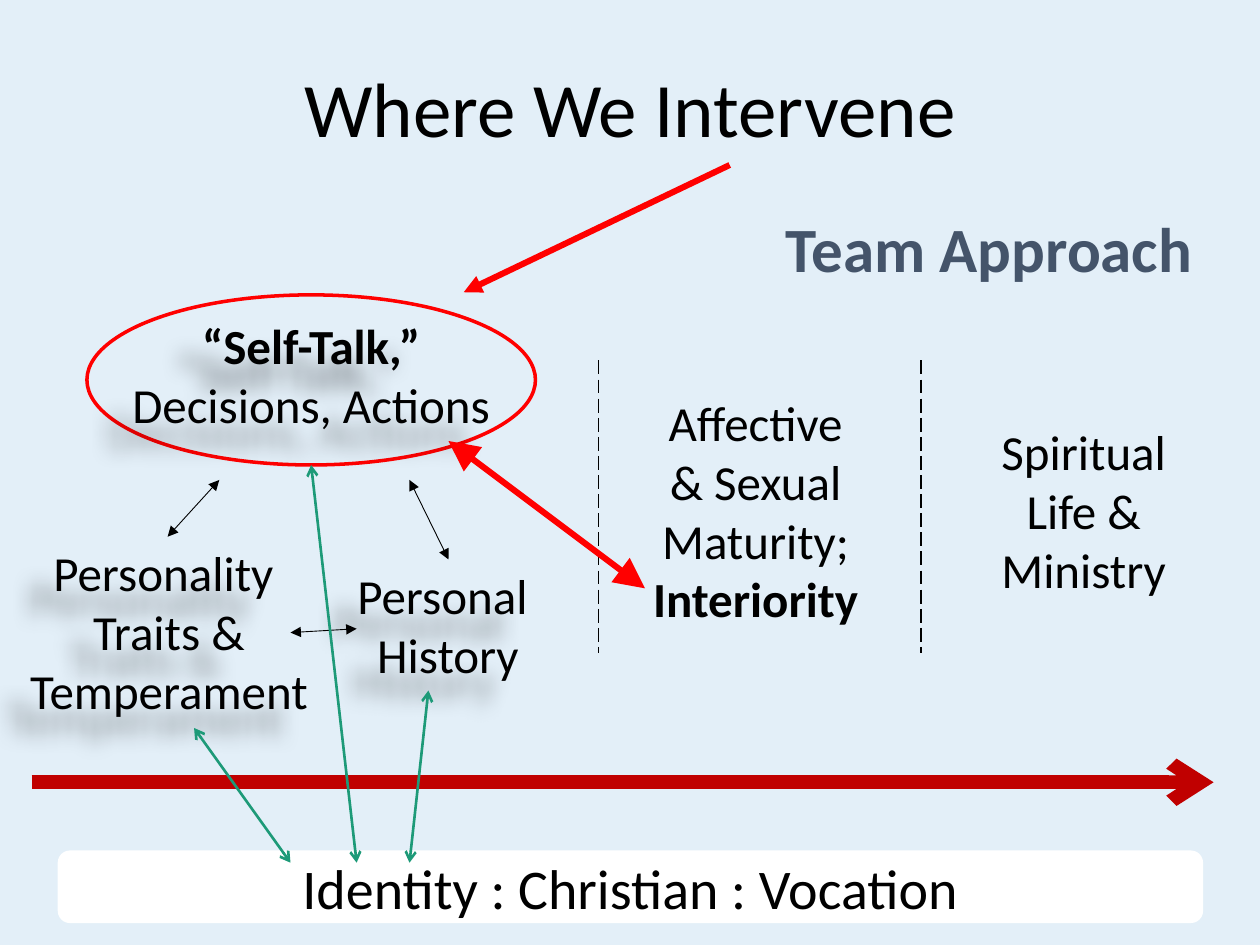
from dataclasses import dataclass

from lxml import etree
from pptx import Presentation
from pptx.dml.color import RGBColor
from pptx.enum.dml import MSO_LINE
from pptx.enum.shapes import MSO_CONNECTOR, MSO_SHAPE
from pptx.enum.text import MSO_ANCHOR, PP_ALIGN
from pptx.oxml import parse_xml
from pptx.oxml.ns import nsdecls, qn
from pptx.util import Pt

STRAIGHT = MSO_CONNECTOR.STRAIGHT
DASH = MSO_LINE.LONG_DASH
OVAL, ROUND = MSO_SHAPE.OVAL, MSO_SHAPE.ROUNDED_RECTANGLE
TOP, MIDDLE = MSO_ANCHOR.TOP, MSO_ANCHOR.MIDDLE
CENTER = PP_ALIGN.CENTER

FONT = "Calibri"
BLACK, WHITE, SLATE = "000000", "FFFFFF", "44546A"
RED, CRIMSON, GREEN, SKY = "FF0000", "C00000", "1D9A78", "E3EFF8"


@dataclass
class Label:
    box: tuple[float, float, float, float]
    lines: list[str]
    size: float = 28
    color: str = BLACK
    bold: tuple[int, ...] = ()
    shadow: bool = False
    anchor: MSO_ANCHOR = TOP


@dataclass
class Line:
    start: tuple[float, float]
    end: tuple[float, float]
    color: str
    width: float
    head: str = ""
    tail: str = ""
    size: str = "med"
    dashed: bool = False


def paint(color: str) -> RGBColor:
    return RGBColor.from_string(color)


def write(frame, label: Label) -> None:
    frame.word_wrap = True
    frame.vertical_anchor = label.anchor
    for i, text in enumerate(label.lines):
        par = frame.paragraphs[0] if i == 0 else frame.add_paragraph()
        par.alignment = CENTER
        run = par.add_run()
        run.text = text
        run.font.name = FONT
        run.font.size = Pt(label.size)
        run.font.bold = i in label.bold
        run.font.color.rgb = paint(label.color)


def add_label(shapes, label: Label) -> None:
    box = shapes.add_textbox(*map(Pt, label.box))
    write(box.text_frame, label)
    if label.shadow:
        # Soft shadow, down and to the left
        box._element.spPr.append(parse_xml(
            f'<a:effectLst {nsdecls("a")}>'
            f'<a:outerShdw blurRad="{Pt(12)}" dist="{Pt(20)}" dir="8100000">'
            '<a:srgbClr val="000000"><a:alpha val="40000"/></a:srgbClr>'
            '</a:outerShdw></a:effectLst>'))


def add_line(shapes, line: Line) -> None:
    link = shapes.add_connector(STRAIGHT, *map(Pt, line.start + line.end))
    link.line.color.rgb = paint(line.color)
    link.line.width = Pt(line.width)
    if line.dashed:
        link.line.dash_style = DASH
    ends = (("a:headEnd", line.head), ("a:tailEnd", line.tail))
    for tag, kind in ends:
        if kind:
            etree.SubElement(link.line._ln, qn(tag), type=kind,
                             w=line.size, len=line.size)
    etree.SubElement(link._element.spPr, qn("a:effectLst"))


def add_shape(shapes, kind: MSO_SHAPE, box: tuple[float, ...]):
    shape = shapes.add_shape(kind, *map(Pt, box))
    shape.shadow.inherit = False
    return shape


def divider(x: float) -> Line:
    return Line((x, 206), (x, 373), BLACK, 1, dashed=True)


def link(start: tuple, end: tuple, color: str, width: float,
         kind: str = "triangle", size: str = "med") -> Line:
    return Line(start, end, color, width, kind, kind, size)


LABELS = [
    Label((1.5, 306.7, 190, 109), ["Personality ", "Traits & Temperament"],
          shadow=True),
    Label((190.8, 319.7, 130.3, 75), ["Personal ", "History"], shadow=True),
    Label((49.7, 177, 256.3, 75), ["“Self-Talk,”", "Decisions, Actions"],
          bold=(0,), shadow=True),
    Label((33, 31, 654.5, 60.5), ["Where We Intervene"], 44),
    Label((561, 221, 116.5, 141), ["Spiritual Life &", "Ministry"],
          anchor=MIDDLE),
    Label((356.5, 221, 150.5, 141),
          ["Affective", "& Sexual", "Maturity;", "Interiority"],
          bold=(3,), anchor=MIDDLE),
    Label((441.5, 116, 247.5, 51), ["Team Approach"], 36, SLATE, (0,)),
]
BANNER = Label((33, 486, 654.5, 41.5), ["Identity : Christian : Vocation"],
               32, anchor=MIDDLE)

LINES = [
    divider(526.3),
    divider(342),
    # Timeline
    Line((18, 447), (693.5, 447), CRIMSON, 7.75, tail="arrow"),
    # Links among the three personal factors
    link((125.3, 274.3), (95.8, 306.7), BLACK, 0.5),
    link((234, 274.3), (256.3, 319.7), BLACK, 0.5),
    link((166, 361.5), (203.8, 359.3), BLACK, 0.5),
    # Links up from identity
    link((166, 493), (110.9, 416), GREEN, 1.5, "arrow"),
    link((234, 493), (244.8, 394.6), GREEN, 1.5, "arrow"),
    link((203.8, 493), (177.8, 265.7), GREEN, 1.5, "arrow"),
    # Points of intervention
    link((256.3, 252), (368.6, 336.2), RED, 3.5, size="lg"),
    Line((417, 94.3), (265, 167), RED, 3.5, tail="triangle"),
]


def main() -> None:
    deck = Presentation()
    deck.slide_width, deck.slide_height = Pt(720), Pt(540)
    slide = deck.slides.add_slide(deck.slide_layouts[6])
    slide.background.fill.solid()
    slide.background.fill.fore_color.rgb = paint(SKY)
    shapes = slide.shapes

    # Ring around self-talk
    ring = add_shape(shapes, OVAL, (49.7, 168.5, 256.3, 97.2))
    ring.fill.background()
    ring.line.color.rgb = paint(RED)
    ring.line.width = Pt(2)

    # Identity banner
    bar = add_shape(shapes, ROUND, BANNER.box)
    bar.fill.solid()
    bar.fill.fore_color.rgb = paint(WHITE)
    bar.line.fill.background()
    write(bar.text_frame, BANNER)

    for label in LABELS:
        add_label(shapes, label)
    for line in LINES:
        add_line(shapes, line)
    deck.save("out.pptx")


if __name__ == "__main__":
    main()
